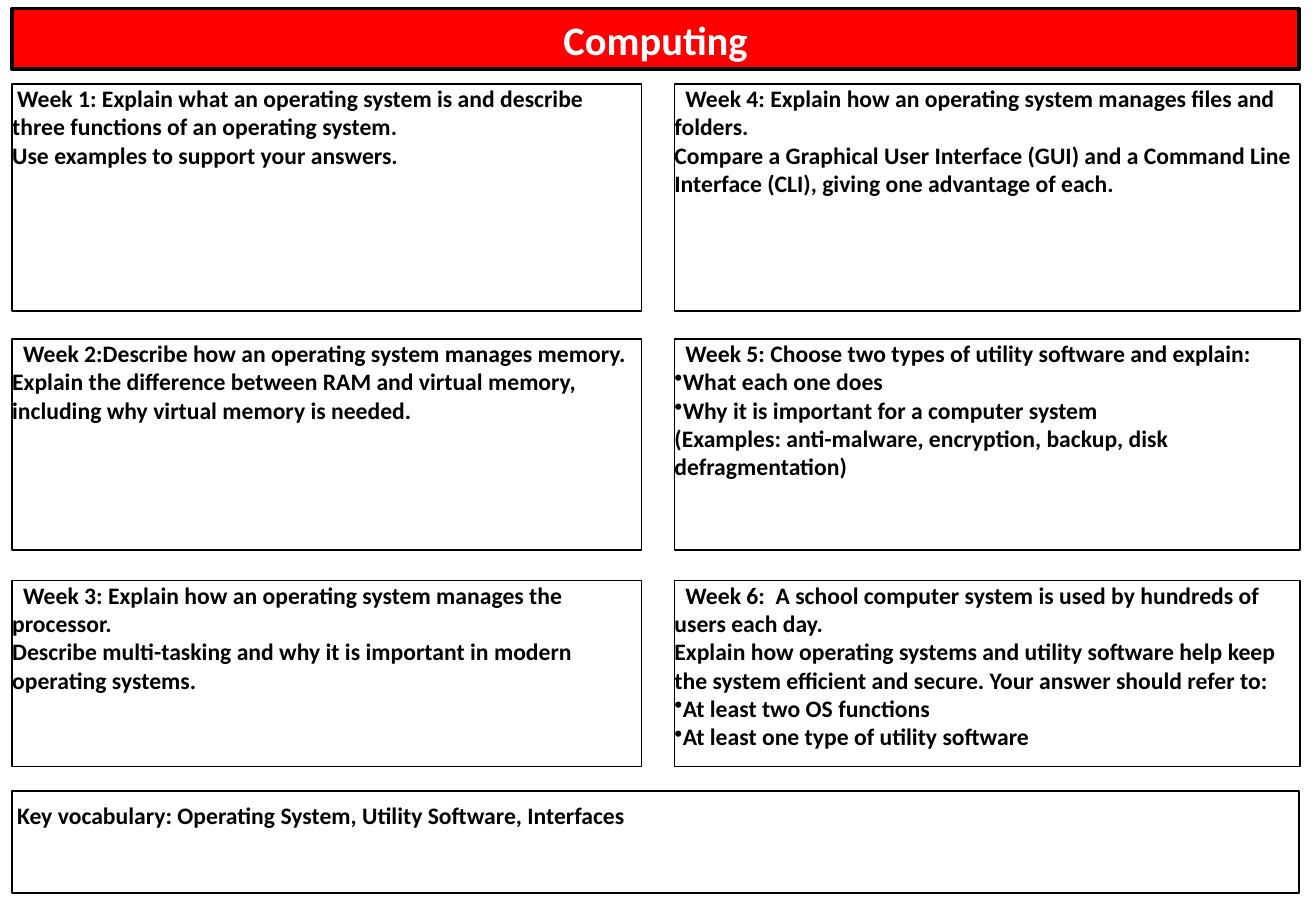
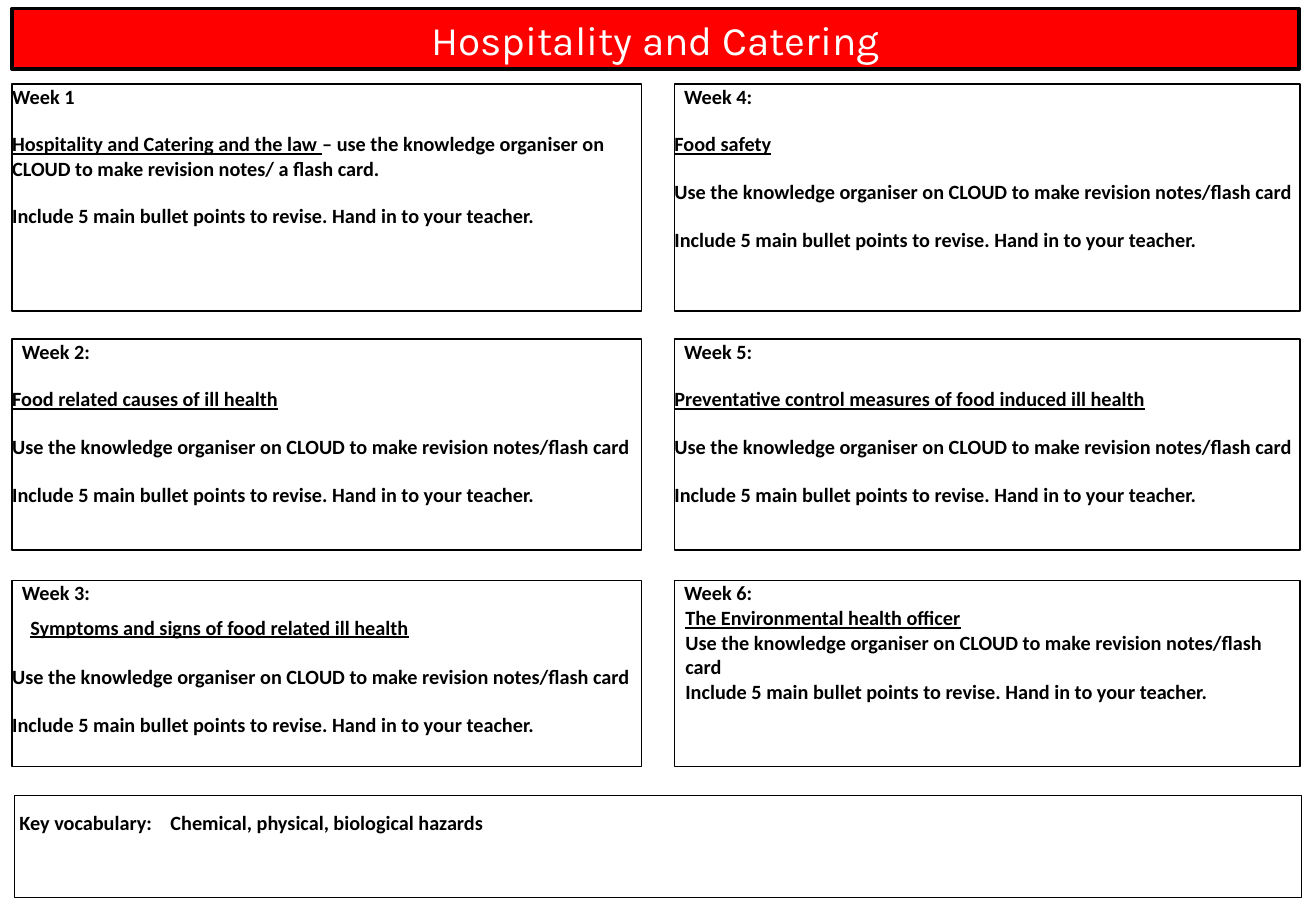
from dataclasses import dataclass

from lxml.etree import SubElement
from pptx import Presentation
from pptx.dml.color import RGBColor
from pptx.enum.shapes import MSO_SHAPE as Shape
from pptx.enum.text import MSO_ANCHOR as Anchor, PP_ALIGN as Align
from pptx.oxml.ns import qn
from pptx.util import Inches, Pt


@dataclass
class Line:
    text: str = ""
    underlined: str = ""   # underlined words ahead of the text
    label: str = ""        # words ahead of the text, set off by a wide space
    before: float = 0      # points
    left: float = 0        # inches
    first: float = 0       # extra indent of the first row, inches
    bullet: str = ""
    exact: float = 0       # fixed row height, points


# Content
GAP = 13.9
NOTES = "Use the knowledge organiser on CLOUD to make revision notes/flash card"
HAND_IN = "Include 5 main bullet points to revise. Hand in to your teacher."


def task(*texts, first=0.09):
    return [Line(texts[0], first=first)] + [Line(text) for text in texts[1:]]


def bullets(*texts):
    return [Line(text, bullet="•") for text in texts]


def revision(week, topic):
    return [Line(week, first=0.08), Line(underlined=topic, before=GAP),
            Line(NOTES, before=GAP), Line(HAND_IN, before=GAP)]


computing = [
    task("Week 1: Explain what an operating system is and describe three functions of an operating system.",
         "Use examples to support your answers.", first=0.04),
    task("Week 2:Describe how an operating system manages memory.",
         "Explain the difference between RAM and virtual memory, including why virtual memory is needed."),
    task("Week 3: Explain how an operating system manages the processor.",
         "Describe multi-tasking and why it is important in modern operating systems."),
    task("Week 4: Explain how an operating system manages files and folders.",
         "Compare a Graphical User Interface (GUI) and a Command Line Interface (CLI), "
         "giving one advantage of each."),
    task("Week 5: Choose two types of utility software and explain:")
    + bullets("What each one does", "Why it is important for a computer system")
    + [Line("(Examples: anti-malware, encryption, backup, disk defragmentation)")],
    task("Week 6:  A school computer system is used by hundreds of users each day.",
         "Explain how operating systems and utility software help keep the system efficient "
         "and secure. Your answer should refer to:")
    + bullets("At least two OS functions", "At least one type of utility software"),
]

catering = [
    [Line("Week 1"),
     Line("– use the knowledge organiser on CLOUD to make revision notes/ a flash card.",
          underlined="Hospitality and Catering and the law ", before=GAP),
     Line(HAND_IN, before=GAP)],
    revision("Week 2:", "Food related causes of ill health"),
    [Line("Week 3:", first=0.08),
     Line(underlined="Symptoms and signs of food related ill health", before=6, left=0.15),
     Line(NOTES, before=GAP + 1), Line(HAND_IN, before=GAP)],
    revision("Week 4:", "Food safety"),
    revision("Week 5:", "Preventative control measures of food induced ill health"),
    [Line("Week 6:", first=0.08),
     Line(underlined="The Environmental health officer", before=0.3, left=0.09),
     Line(NOTES, before=0.3, left=0.09), Line(HAND_IN, before=0.3, left=0.09)],
]

SLIDES = [
    dict(title="Computing", title_font="Calibri", title_bold=True, size=14, weeks=computing,
         vocabulary=Line("Key vocabulary: Operating System, Utility Software, Interfaces", exact=11.5),
         vocabulary_at=(0.1, 6.51)),
    dict(title="Hospitality and Catering", title_font="Karla", title_bold=False, size=12,
         weeks=catering,
         vocabulary=Line("Chemical, physical, biological hazards", label="Key vocabulary:", exact=11.5),
         vocabulary_at=(0.12, 6.55)),
]

# Shared style and layout
COLOURS = {"band": "FF0000", "title": "FFFFFF", "ink": "000000"}
BODY_FONT = "Calibri"
LABEL_SPACING = 8.1                                # points added to the space after a label
COLUMNS = [(0.1, 5.18), (5.55, 5.15)]              # left, width
ROWS = [(0.69, 1.87), (2.79, 1.74), (4.78, 1.53)]  # top, height
FULL_WIDTH = 10.59


def colour(name):
    return RGBColor.from_string(COLOURS[name])


def add_box(page, left, top, width, height, fill=None, line_width=1):
    box = page.shapes.add_shape(Shape.RECTANGLE, *map(Inches, (left, top, width, height)))
    box.shadow.inherit = False
    if fill:
        box.fill.solid()
        box.fill.fore_color.rgb = colour(fill)
    else:
        box.fill.background()
    box.line.color.rgb = colour("ink")
    box.line.width = Pt(line_width)
    box.text_frame.word_wrap = True
    return box


def format_span(span, size, font=BODY_FONT, bold=True, ink="ink"):
    span.font.size = Pt(size)
    span.font.name = font
    span.font.bold = bold
    span.font.color.rgb = colour(ink)


def add_span(para, text, size, underline=False, spacing=0):
    span = para.add_run()
    span.text = text
    format_span(span, size)
    span.font.underline = underline
    if spacing:
        span._r.get_or_add_rPr().set("spc", str(round(spacing * 100)))


def write_lines(box, lines, size, inset_left=0, inset_top=0):
    frame = box.text_frame
    frame.vertical_anchor = Anchor.TOP
    frame.margin_left, frame.margin_top = Inches(inset_left), Inches(inset_top)
    frame.margin_right = frame.margin_bottom = 0
    for number, line in enumerate(lines):
        para = frame.add_paragraph() if number else frame.paragraphs[0]
        para.alignment = Align.LEFT
        para.space_before = Pt(line.before)
        if line.exact:
            para.line_spacing = Pt(line.exact)
        properties = para._p.get_or_add_pPr()
        properties.set("marL", str(Inches(line.left)))
        properties.set("indent", str(Inches(line.first)))
        if line.bullet:
            SubElement(properties, qn("a:buChar"), char=line.bullet)
        if line.label:
            add_span(para, line.label, size)
            add_span(para, " ", size, spacing=LABEL_SPACING)
        if line.underlined:
            add_span(para, line.underlined, size, underline=True)
        if line.text:
            add_span(para, line.text, size)


def add_title(page, title, font, bold):
    band = add_box(page, COLUMNS[0][0], 0.07, FULL_WIDTH, 0.5, "band", 2.25)
    band.text_frame.vertical_anchor = Anchor.MIDDLE
    para = band.text_frame.paragraphs[0]
    para.text = title
    para.alignment = Align.CENTER
    format_span(para.runs[0], 24, font, bold, "title")


def main():
    deck = Presentation()
    deck.slide_width, deck.slide_height = Inches(10.83), Inches(7.5)
    for content in SLIDES:
        page = deck.slides.add_slide(deck.slide_layouts[6])
        add_title(page, content["title"], content["title_font"], content["title_bold"])

        # Weeks run down the left column, then the right
        for number, lines in enumerate(content["weeks"]):
            column, row = divmod(number, len(ROWS))
            left, width = COLUMNS[column]
            top, height = ROWS[row]
            write_lines(add_box(page, left, top, width, height), lines, content["size"])

        # Key vocabulary
        box = add_box(page, *content["vocabulary_at"], FULL_WIDTH, 0.84)
        write_lines(box, [content["vocabulary"]], content["size"], inset_left=0.04, inset_top=0.16)
    deck.save("out.pptx")


if __name__ == "__main__":
    main()
